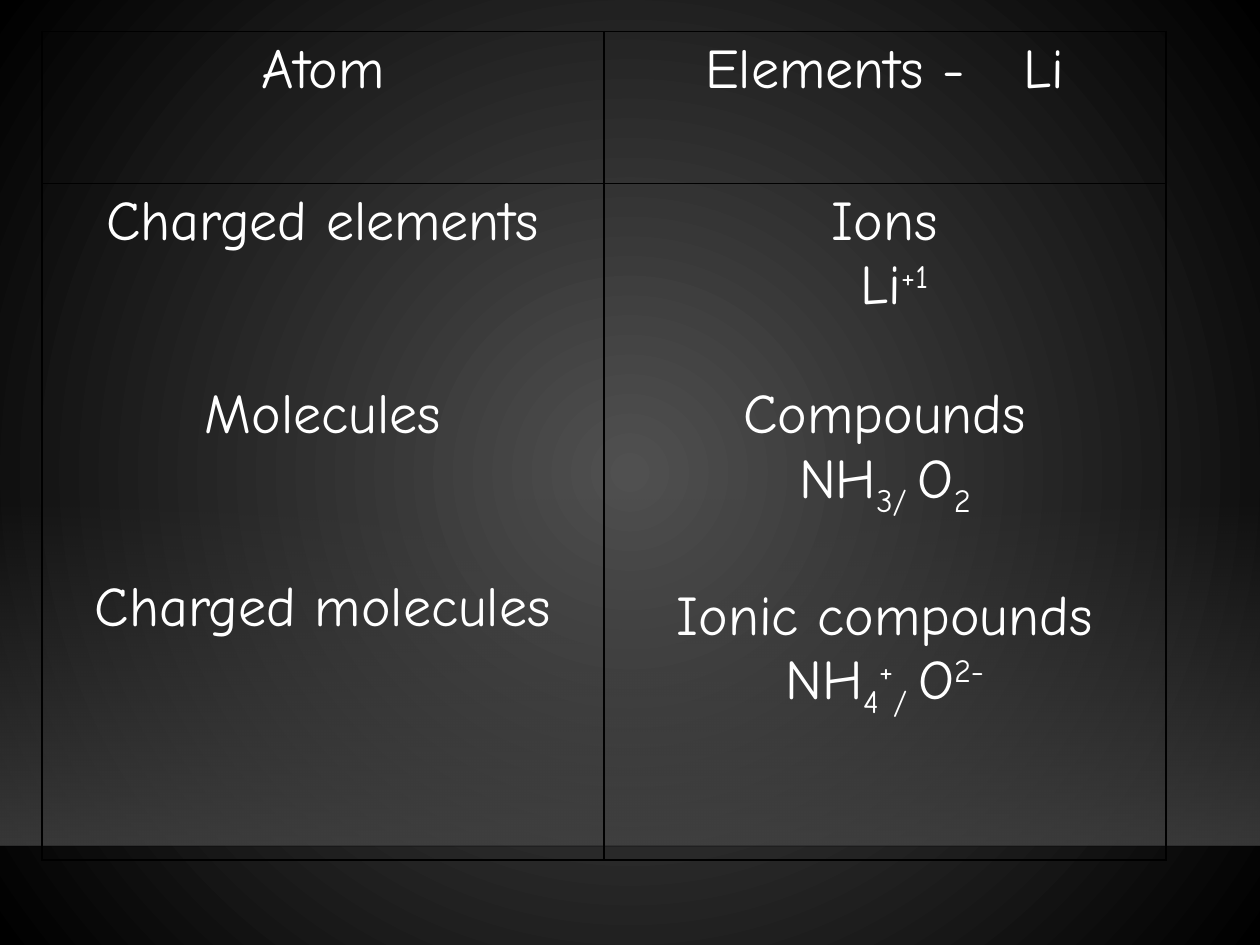
import pptx
import pptx.dml.color
import pptx.enum.shapes
import pptx.enum.text
import pptx.oxml
import pptx.oxml.ns
import pptx.util
from dataclasses import dataclass
from typing import Any

Pt = pptx.util.Pt
qn = pptx.oxml.ns.qn
SPACE = 'xmlns:a="http://schemas.openxmlformats.org/drawingml/2006/main"'


@dataclass(frozen=True)
class Theme:
    font: str = "Comic Neue"
    size: float = 32
    text: str = "FFFFFF"
    glow: str = "505050"
    dark: str = "000000"
    floor: str = "454545"
    edge: str = "000001"
    rule: float = 1


@dataclass(frozen=True)
class Piece:
    text: str
    base: int = 0
    track: int = 0


@dataclass(frozen=True)
class Line:
    pieces: tuple[Piece, ...]
    gap: float = 0


@dataclass(frozen=True)
class Stop:
    place: int
    color: str
    alpha: int = 100


THEME = Theme()
ROW = THEME.size * 1.15
SUB, SUP = -25, 30
FORMAT = {"name": THEME.font, "size": Pt(THEME.size)}
PLAIN = {"first_row": False, "horz_banding": False}
INSET = {"margin_left": Pt(7.2), "margin_right": Pt(7.2),
         "margin_top": Pt(3.6), "margin_bottom": Pt(3.6)}


def plain(text: str, gap: float = 0) -> Line:
    return Line((Piece(text),), gap)


GRID = (
    (
        (plain("Atom"),),
        (Line((Piece("Elements -"), Piece(" ", track=2280), Piece("Li"))),),
    ),
    (
        (
            plain("Charged elements"),
            plain("Molecules", 2 * ROW),
            plain("Charged molecules", 2 * ROW),
        ),
        (
            plain("Ions"),
            Line((Piece(" Li"), Piece("+1", SUP))),
            plain("Compounds", ROW),
            Line((Piece("NH"), Piece("3/ ", SUB), Piece("O"), Piece("2", SUB))),
            plain("Ionic compounds", ROW),
            Line((Piece("NH"), Piece("4", SUB), Piece("+", SUP),
                  Piece("/ ", SUB), Piece("O"), Piece("2-", SUP))),
        ),
    ),
)


def apply(item: Any, values: dict[str, Any]) -> None:
    for name, value in values.items():
        setattr(item, name, value)


def shade(fill: Any, root: Any, stops: tuple[Stop, ...], form: str) -> None:
    fill.gradient()
    marks = "".join(
        f'<a:gs pos="{s.place * 1000}"><a:srgbClr val="{s.color}">'
        f'<a:alpha val="{s.alpha * 1000}"/></a:srgbClr></a:gs>'
        for s in stops
    )
    old = next(root.iter(qn("a:gradFill")))
    new = pptx.oxml.parse_xml(
        f'<a:gradFill {SPACE} rotWithShape="1"><a:gsLst>{marks}</a:gsLst>{form}</a:gradFill>'
    )
    old.getparent().replace(old, new)


def backdrop(slide: Any) -> None:
    shade(
        slide.background.fill, slide._element,
        (Stop(0, THEME.glow), Stop(100, THEME.dark)),
        '<a:path path="circle"><a:fillToRect l="50000" t="50000" r="50000" b="50000"/></a:path>',
    )
    top, base, width = 285.12, 483.5, 720
    floor = slide.shapes.add_shape(
        pptx.enum.shapes.MSO_SHAPE.RECTANGLE, 0, Pt(top), Pt(width), Pt(base - top)
    )
    floor.shadow.inherit = False
    floor.line.fill.background()
    shade(
        floor.fill, floor._element,
        (Stop(0, THEME.floor, 0), Stop(100, THEME.floor, 80)),
        '<a:lin ang="5400000" scaled="0"/>',
    )
    edge = slide.shapes.add_connector(
        pptx.enum.shapes.MSO_CONNECTOR.STRAIGHT, 0, Pt(base), Pt(width), Pt(base)
    )
    edge.line.width = Pt(THEME.rule)
    edge.line.color.rgb = pptx.dml.color.RGBColor.from_string(THEME.edge)
    tint = next(edge._element.spPr.iter(qn("a:srgbClr")))
    tint.append(pptx.oxml.parse_xml(f'<a:alpha {SPACE} val="20000"/>'))
    edge._element.spPr.append(pptx.oxml.parse_xml(f"<a:effectLst {SPACE}/>"))


def border(cell: Any) -> None:
    props = cell._tc.get_or_add_tcPr()
    for order, side in enumerate("LRTB"):
        props.insert(order, pptx.oxml.parse_xml(
            f'<a:ln{side} {SPACE} w="{Pt(THEME.rule)}"><a:solidFill>'
            f'<a:srgbClr val="{THEME.dark}"/></a:solidFill></a:ln{side}>'
        ))


def write(cell: Any, lines: tuple[Line, ...]) -> None:
    frame = cell.text_frame
    for order, line in enumerate(lines):
        para = frame.add_paragraph() if order else frame.paragraphs[0]
        para.alignment = pptx.enum.text.PP_ALIGN.CENTER
        if line.gap:
            para.space_before = Pt(line.gap)
        for piece in line.pieces:
            run = para.add_run()
            run.text = piece.text
            apply(run.font, FORMAT)
            run.font.color.rgb = pptx.dml.color.RGBColor.from_string(THEME.text)
            props = run._r.get_or_add_rPr()
            if piece.base:
                props.set("baseline", str(piece.base * 1000))
            if piece.track:
                props.set("spc", str(piece.track))


def grid(slide: Any) -> None:
    wide, highs = 321.1, (87, 386.5)
    table = slide.shapes.add_table(
        len(GRID), len(GRID[0]), Pt(24), Pt(18), Pt(2 * wide), Pt(sum(highs))
    ).table
    apply(table, PLAIN)
    for column in table.columns:
        column.width = Pt(wide)
    for row, high, cells in zip(table.rows, highs, GRID):
        row.height = Pt(high)
        for cell, lines in zip(row.cells, cells):
            cell.fill.background()
            apply(cell, INSET)
            border(cell)
            write(cell, lines)


def main() -> None:
    deck = pptx.Presentation()
    apply(deck, {"slide_width": Pt(720), "slide_height": Pt(540)})
    slide = deck.slides.add_slide(deck.slide_layouts[6])
    backdrop(slide)
    grid(slide)
    deck.save("out.pptx")


if __name__ == "__main__":
    main()
